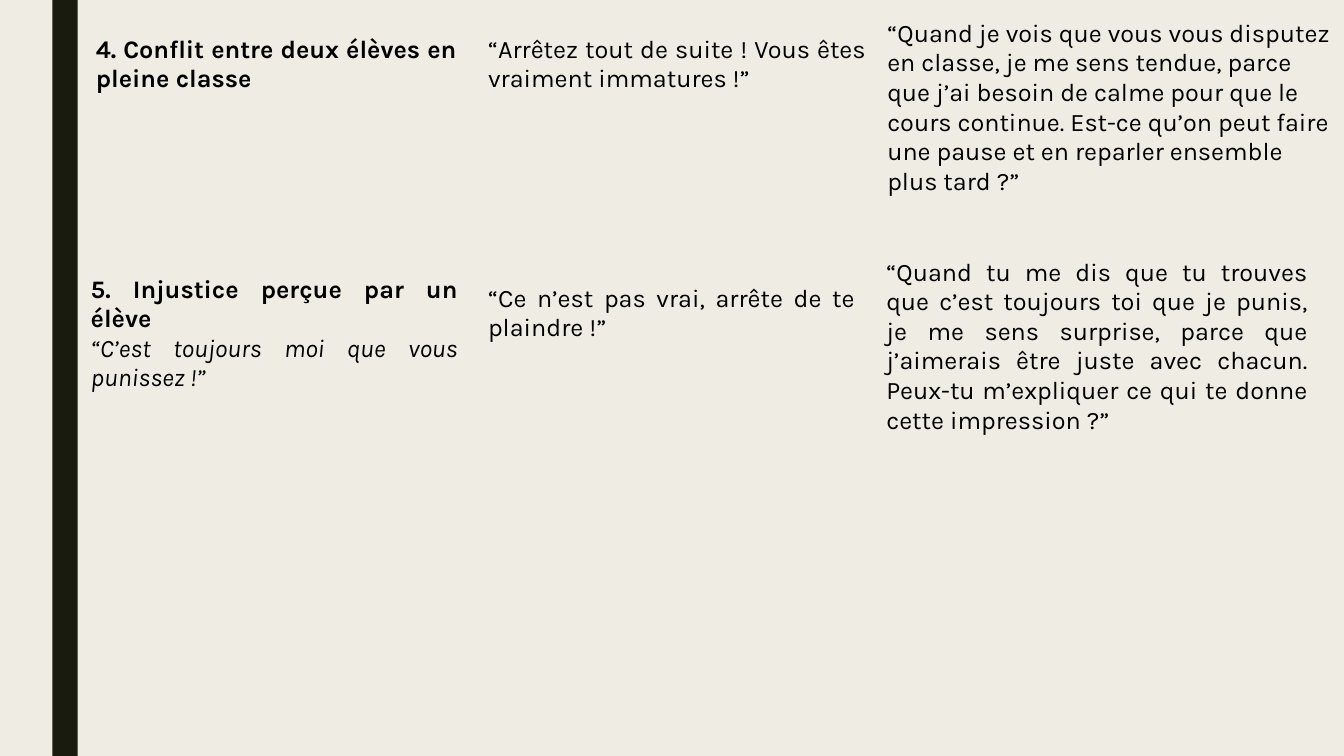
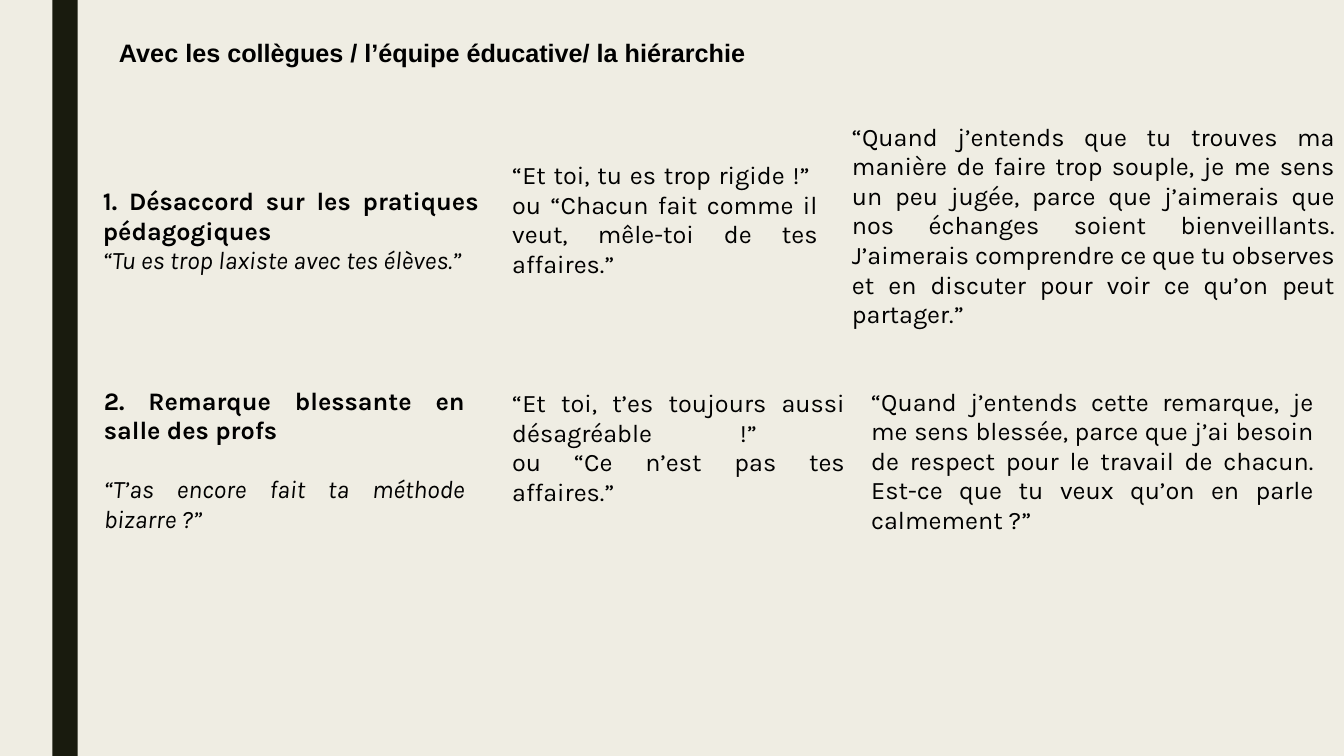
from dataclasses import dataclass

from lxml import etree
from pptx import Presentation
from pptx import util as u
from pptx.dml.color import RGBColor
from pptx.enum import shapes, text
from pptx.oxml import ns

PAPER, BAND, INK = "EFEDE3", "191B0E", "000000"
HEADING_FONT, BODY_FONT = "Arial", "Karla"
TEXT_SIZE = 18
BLANK_LINE = 21
JUSTIFY, LEFT = text.PP_ALIGN.JUSTIFY, text.PP_ALIGN.LEFT


@dataclass(frozen=True)
class Box:
    left: float
    top: float
    width: float
    height: float

    def lengths(self):
        return [u.Inches(n) for n in (self.left, self.top, self.width, self.height)]


@dataclass(frozen=True)
class Reply:
    box: Box
    words: str
    align: text.PP_ALIGN = JUSTIFY


@dataclass(frozen=True)
class Situation:
    box: Box
    heading: str
    remark: str = ""
    spaced: bool = False  # remark set apart in its own paragraph


@dataclass(frozen=True)
class Exchange:
    situation: Situation
    reaction: Reply
    caring_reply: Reply


@dataclass(frozen=True)
class Page:
    exchanges: tuple[Exchange, ...]
    title: str = ""


PAGES = (
    Page((
        Exchange(
            Situation(Box(0.85, 0.28, 3.78, 0.72),
                      "4. Conflit entre deux élèves en pleine classe"),
            Reply(Box(4.74, 0.28, 3.95, 0.72),
                  "“Arrêtez tout de suite ! Vous êtes vraiment immatures !”"),
            Reply(Box(8.7, 0.12, 4.64, 1.9),
                  "“Quand je vois que vous vous disputez en classe, je me sens "
                  "tendue, parce que j’ai besoin de calme pour que le cours "
                  "continue. Est-ce qu’on peut faire une pause et en reparler "
                  "ensemble plus tard ?”", LEFT),
        ),
        Exchange(
            Situation(Box(0.8, 2.37, 3.84, 1.89),
                      "5. Injustice perçue par un élève",
                      "“C’est toujours moi que vous punissez !”"),
            Reply(Box(4.74, 2.75, 3.84, 0.72),
                  "“Ce n’est pas vrai, arrête de te plaindre !”"),
            Reply(Box(8.69, 2.51, 4.38, 1.6),
                  "“Quand tu me dis que tu trouves que c’est toujours toi que je "
                  "punis, je me sens surprise, parce que j’aimerais être juste "
                  "avec chacun. Peux-tu m’expliquer ce qui te donne cette "
                  "impression ?”"),
        ),
    )),
    Page((
        Exchange(
            Situation(Box(0.92, 1.44, 3.93, 1.72),
                      "1. Désaccord sur les pratiques pédagogiques",
                      "“Tu es trop laxiste avec tes élèves.”"),
            Reply(Box(4.98, 1.44, 3.23, 1.5),
                  "“Et toi, tu es trop rigide !” \nou “Chacun fait comme il "
                  "veut, mêle-toi de tes affaires.”"),
            Reply(Box(8.35, 1.17, 4.99, 1.9),
                  "“Quand j’entends que tu trouves ma manière de faire trop "
                  "souple, je me sens un peu jugée, parce que j’aimerais que nos "
                  "échanges soient bienveillants. J’aimerais comprendre ce que "
                  "tu observes et en discuter pour voir ce qu’on peut partager.”"),
        ),
        Exchange(
            Situation(Box(0.93, 3.77, 3.78, 1.6),
                      "2. Remarque blessante en salle des profs",
                      "“T’as encore fait ta méthode bizarre ?”", spaced=True),
            Reply(Box(4.98, 3.6, 3.5, 1.7),
                  "“Et toi, t’es toujours aussi désagréable !” \nou “Ce n’est "
                  "pas tes affaires.”"),
            Reply(Box(8.54, 3.8, 4.59, 1.3),
                  "“Quand j’entends cette remarque, je me sens blessée, parce "
                  "que j’ai besoin de respect pour le travail de chacun. Est-ce "
                  "que tu veux qu’on en parle calmement ?”"),
        ),
    ), title="Avec les collègues / l’équipe éducative/ la hiérarchie"),
)


def paint(fill, color: str) -> None:
    fill.solid()
    fill.fore_color.rgb = RGBColor.from_string(color)


def write(paragraph, words: str, *, font: str = BODY_FONT, bold: bool = False,
          italic: bool = False, align: text.PP_ALIGN = JUSTIFY) -> None:
    """Append formatted words; each newline becomes a line break."""
    paragraph.alignment = align
    for index, line in enumerate(words.split("\n")):
        if index:
            paragraph.add_line_break()
        if line:
            run = paragraph.add_run()
            run.text = line
            run.font.name = font
            run.font.size = u.Pt(TEXT_SIZE)
            run.font.bold, run.font.italic = bold, italic
            paint(run.font.fill, INK)


def add_cell(slide, box: Box):
    """Add a bare one-cell table and return its text frame."""
    table = slide.shapes.add_table(1, 1, *box.lengths()).table
    table.first_row = table.horz_banding = False
    cell = table.cell(0, 0)
    cell.vertical_anchor = text.MSO_ANCHOR.MIDDLE
    properties = cell._tc.get_or_add_tcPr()
    for side in ("lnL", "lnR", "lnT", "lnB"):
        border = etree.SubElement(properties, ns.qn(f"a:{side}"))
        etree.SubElement(border, ns.qn("a:noFill"))
    cell.fill.background()
    return cell.text_frame


def add_situation(slide, situation: Situation) -> None:
    frame = add_cell(slide, situation.box)
    paragraph = frame.paragraphs[0]
    write(paragraph, situation.heading, bold=True)
    if not situation.remark:
        return
    if situation.spaced:
        paragraph = frame.add_paragraph()
        paragraph.space_before = u.Pt(BLANK_LINE)
    else:
        paragraph.add_line_break()
    write(paragraph, situation.remark, italic=True)


def add_reply(slide, reply: Reply) -> None:
    write(add_cell(slide, reply.box).paragraphs[0], reply.words, align=reply.align)


def add_band(slide) -> None:
    band = slide.shapes.add_shape(shapes.MSO_SHAPE.RECTANGLE,
                                  *Box(0.52, 0, 0.25, 7.5).lengths())
    band.shadow.inherit = False
    paint(band.fill, BAND)
    band.line.fill.background()


def set_title(slide, words: str) -> None:
    title = slide.shapes.title
    title.left, title.top, title.width, title.height = Box(1.08, 0.32, 11.97, 0.4).lengths()
    frame = title.text_frame
    frame.word_wrap = True
    frame.auto_size = text.MSO_AUTO_SIZE.NONE
    frame.vertical_anchor = text.MSO_ANCHOR.TOP
    write(frame.paragraphs[0], words, font=HEADING_FONT, bold=True, align=LEFT)


def add_page(deck, page: Page) -> None:
    layout = "Title Only" if page.title else "Blank"
    slide = deck.slides.add_slide(deck.slide_layouts.get_by_name(layout))
    add_band(slide)
    if page.title:
        set_title(slide, page.title)
    for exchange in page.exchanges:
        add_situation(slide, exchange.situation)
        add_reply(slide, exchange.reaction)
        add_reply(slide, exchange.caring_reply)


def main() -> None:
    deck = Presentation()
    deck.slide_width, deck.slide_height = u.Inches(13.33), u.Inches(7.5)
    paint(deck.slide_master.background.fill, PAPER)
    for page in PAGES:
        add_page(deck, page)
    deck.save("out.pptx")


if __name__ == "__main__":
    main()
